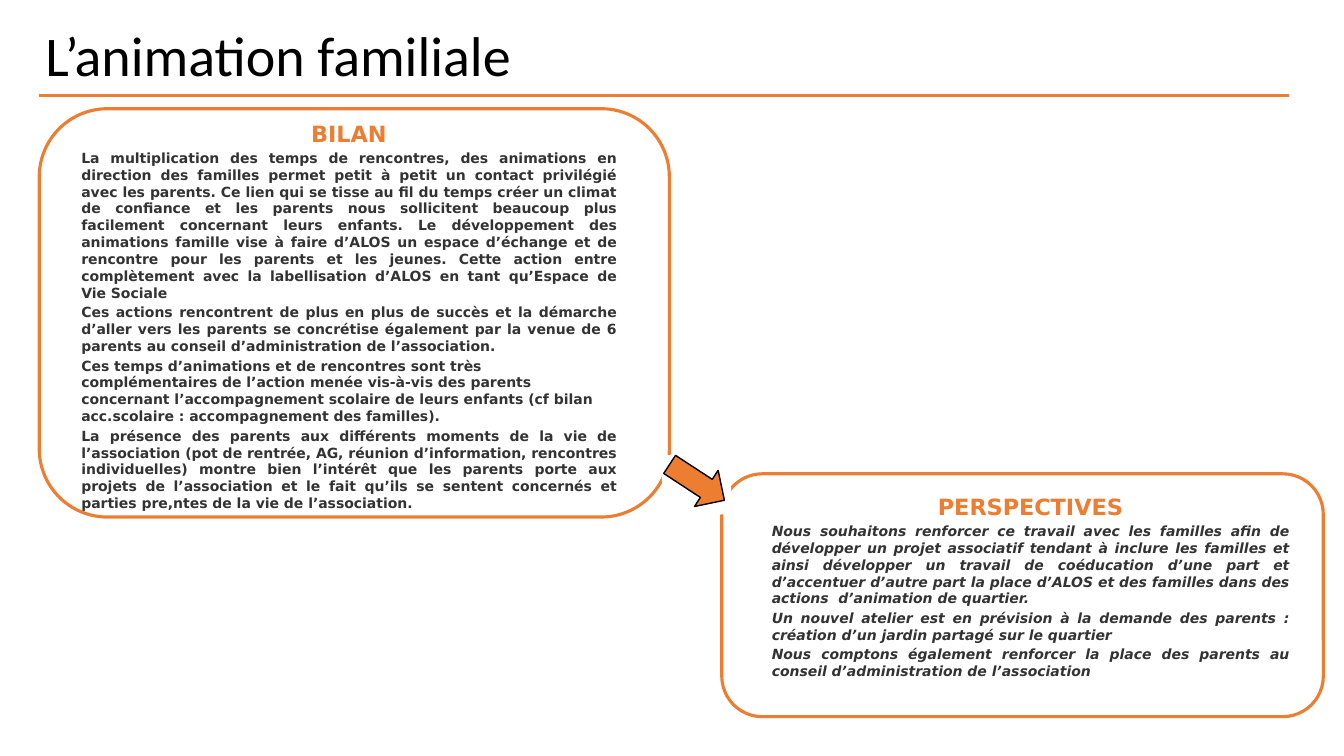
from dataclasses import dataclass

from lxml import etree
from pptx import Presentation
from pptx.dml.color import RGBColor
from pptx.enum.shapes import MSO_CONNECTOR, MSO_SHAPE
from pptx.enum.text import MSO_ANCHOR, MSO_AUTO_SIZE, PP_ALIGN
from pptx.oxml.ns import qn
from pptx.util import Cm, Pt

STRAIGHT = MSO_CONNECTOR.STRAIGHT
RECT = MSO_SHAPE.RECTANGLE
ROUNDED = MSO_SHAPE.ROUNDED_RECTANGLE
ARROW = MSO_SHAPE.RIGHT_ARROW
TOP, BOTTOM = MSO_ANCHOR.TOP, MSO_ANCHOR.BOTTOM
NO_AUTOFIT = MSO_AUTO_SIZE.NONE
LEFT, CENTER, JUSTIFY = PP_ALIGN.LEFT, PP_ALIGN.CENTER, PP_ALIGN.JUSTIFY

ORANGE, GREY, BLACK, WHITE = "ED7D31", "333333", "000000", "FFFFFF"
TITLE_FONT, TEXT_FONT = "Calibri", "DejaVu Sans"


@dataclass
class Box:
    left: float
    top: float
    width: float
    height: float

    def lengths(self) -> tuple:
        return Cm(self.left), Cm(self.top), Cm(self.width), Cm(self.height)


@dataclass
class Item:
    text: str
    align: PP_ALIGN = JUSTIFY


@dataclass
class Panel:
    frame: Box
    text_box: Box
    heading: str
    items: list[Item]
    italic: bool = False


PANELS = [
    Panel(
        Box(0.99, 2.74, 15.88, 10.29),
        Box(1.19, 2.72, 15.21, 9.88),
        "BILAN",
        [
            Item("La multiplication des temps de rencontres, des animations en direction des familles "
                 "permet petit à petit un contact privilégié avec les parents. Ce lien qui se tisse au "
                 "fil du temps créer un climat de confiance et les parents nous sollicitent beaucoup plus "
                 "facilement concernant leurs enfants. Le développement des animations famille vise à "
                 "faire d’ALOS un espace d’échange et de rencontre pour les parents et les jeunes. Cette "
                 "action entre complètement avec la labellisation d’ALOS en tant qu’Espace de Vie Sociale"),
            Item("Ces actions rencontrent de plus en plus de succès et la démarche d’aller vers les "
                 "parents se concrétise également par la venue de 6 parents au conseil "
                 "d’administration de l’association."),
            Item("Ces temps d’animations et de rencontres sont très complémentaires de l’action menée "
                 "vis-à-vis des parents concernant l’accompagnement scolaire de leurs enfants "
                 "(cf bilan acc.scolaire : accompagnement des familles).", LEFT),
            Item("La présence des parents aux différents moments de la vie de l’association (pot de "
                 "rentrée, AG, réunion d’information, rencontres individuelles) montre bien l’intérêt "
                 "que les parents porte aux projets de l’association et le fait qu’ils se sentent "
                 "concernés et parties pre,ntes de la vie de l’association."),
        ],
    ),
    Panel(
        Box(18.19, 11.94, 15.16, 6.12),
        Box(18.59, 12.12, 14.76, 5.77),
        "PERSPECTIVES",
        [
            Item("Nous souhaitons renforcer ce travail avec les familles afin de développer un projet "
                 "associatif tendant à inclure les familles et ainsi développer un travail de "
                 "coéducation d’une part et d’accentuer d’autre part la place d’ALOS et des familles "
                 "dans des actions  d’animation de quartier."),
            Item("Un nouvel atelier est en prévision à la demande des parents : création d’un jardin "
                 "partagé sur le quartier"),
            Item("Nous comptons également renforcer la place des parents au conseil d’administration "
                 "de l’association"),
        ],
        italic=True,
    ),
]


def paint(color_format, color: str) -> None:
    color_format.rgb = RGBColor.from_string(color)


def set_font(p, name: str, size: float, color: str, bold: bool = False, italic: bool = False) -> None:
    font = p.font
    font.name, font.size, font.bold, font.italic = name, Pt(size), bold, italic
    paint(font.color, color)


def add_title(s, text: str, box: Box) -> None:
    title = s.shapes.title
    title.left, title.top, title.width, title.height = box.lengths()
    tf = title.text_frame
    tf.text = text
    tf.vertical_anchor, tf.auto_size = BOTTOM, NO_AUTOFIT
    p = tf.paragraphs[0]
    p.alignment, p.line_spacing = LEFT, 0.9
    set_font(p, TITLE_FONT, 40, BLACK)


def add_rule(s, left: float, right: float, y: float) -> None:
    rule = s.shapes.add_connector(STRAIGHT, Cm(left), Cm(y), Cm(right), Cm(y))
    paint(rule.line.color, ORANGE)
    rule.line.width = Pt(2.25)
    etree.SubElement(rule._element.spPr, qn("a:effectLst"))


def add_figure(shapes, kind: MSO_SHAPE, box: Box, fill: str = "", line: str = "",
               width: float = 1, rotation: float = 0) -> None:
    sp = shapes.add_shape(kind, *box.lengths())
    sp.shadow.inherit = False
    sp.rotation = rotation
    if fill:
        sp.fill.solid()
        paint(sp.fill.fore_color, fill)
    else:
        sp.fill.background()
    if line:
        paint(sp.line.color, line)
        sp.line.width = Pt(width)
    else:
        sp.line.fill.background()


def add_panel(s, panel: Panel) -> None:
    add_figure(s.shapes, ROUNDED, panel.frame, line=ORANGE, width=2.25)
    tf = s.shapes.add_textbox(*panel.text_box.lengths()).text_frame
    tf.word_wrap, tf.vertical_anchor, tf.auto_size = True, TOP, NO_AUTOFIT
    tf.margin_left = tf.margin_right = Cm(0.86)
    tf.margin_top, tf.margin_bottom = Cm(0.3), 0
    p = tf.paragraphs[0]
    p.text, p.alignment = panel.heading, CENTER
    set_font(p, TEXT_FONT, 16, ORANGE, bold=True)
    for item in panel.items:
        p = tf.add_paragraph()
        p.text, p.alignment, p.space_before = item.text, item.align, Pt(2)
        set_font(p, TEXT_FONT, 10, GREY, bold=True, italic=panel.italic)


def main() -> None:
    prs = Presentation()
    prs.slide_width, prs.slide_height = Cm(33.87), Cm(19.05)
    s = prs.slides.add_slide(prs.slide_layouts.get_by_name("Title Only"))
    add_title(s, "L’animation familiale", Box(0.89, 0, 27.2, 2.36))
    add_rule(s, 0.99, 32.49, 2.41)
    for panel in PANELS:
        add_panel(s, panel)
    link = s.shapes.add_group_shape().shapes
    add_figure(link, RECT, Box(16.69, 11.43, 1.73, 1.57), fill=WHITE, rotation=356.7)
    add_figure(link, ARROW, Box(16.74, 11.61, 1.65, 1.09), fill=ORANGE, line=BLACK, rotation=33.2)
    prs.save("out.pptx")


if __name__ == "__main__":
    main()
